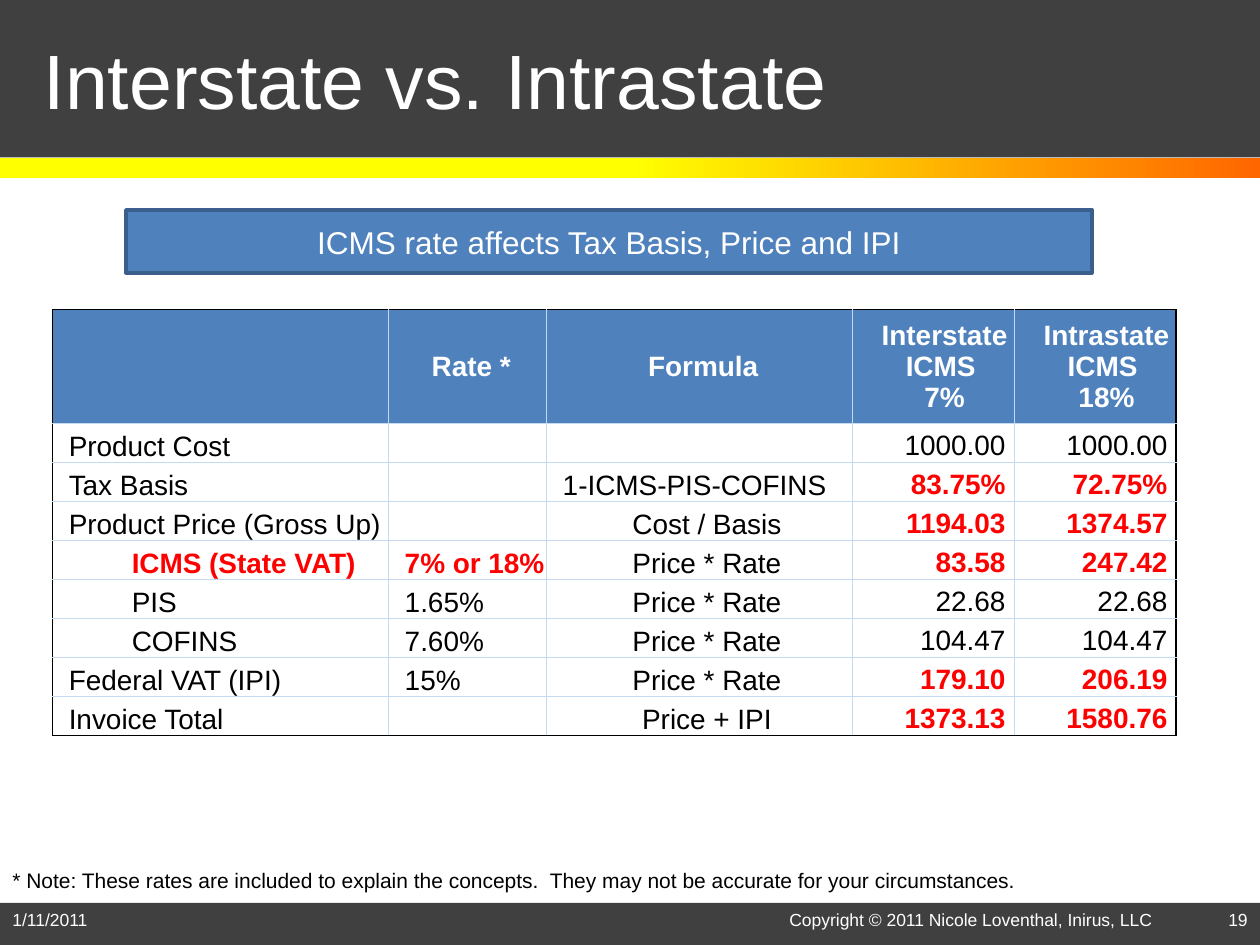
from lxml.etree import SubElement
from pptx import Presentation
from pptx.dml.color import RGBColor
from pptx.enum.shapes import MSO_SHAPE as Preset
from pptx.enum.text import MSO_ANCHOR as Anchor, PP_ALIGN as Align
from pptx.oxml.ns import qn
from pptx.util import Pt

WHITE = RGBColor(0xFF, 0xFF, 0xFF)
BLACK = RGBColor(0x00, 0x00, 0x00)
CHARCOAL = RGBColor(0x40, 0x40, 0x40)
ORANGE = RGBColor(0xFF, 0x66, 0x00)
YELLOW = RGBColor(0xFF, 0xFF, 0x00)
BLUE = RGBColor(0x4F, 0x81, 0xBD)
DARK_BLUE = RGBColor(0x3A, 0x5F, 0x8C)
PALE_BLUE = RGBColor(0xC5, 0xD9, 0xF1)
RED = RGBColor(0xFF, 0x00, 0x00)

PAGE_WIDTH, PAGE_HEIGHT = 720, 540
COLUMN_WIDTHS = [192, 90.3, 174.8, 92.5, 92.5]
HEADER_HEIGHT, ROW_HEIGHT = 60.6, 22.3
INDENT, SUB_INDENT, HEADER_INDENT = 4.3, 40.3, 8.6

HEADERS = ["", "Rate *", "Formula", "Interstate\nICMS \n7%", "Intrastate\nICMS \n18%"]
ROWS = [
    ["Product Cost", "", "", "1000.00", "1000.00"],
    ["Tax Basis", "", "1-ICMS-PIS-COFINS", "83.75%", "72.75%"],
    ["Product Price (Gross Up)", "", "Cost / Basis", "1194.03", "1374.57"],
    ["ICMS (State VAT)", "7% or 18%", "Price * Rate", "83.58", "247.42"],
    ["PIS", "1.65%", "Price * Rate", "22.68", "22.68"],
    ["COFINS", "7.60%", "Price * Rate", "104.47", "104.47"],
    ["Federal VAT (IPI)", "15%", "Price * Rate", "179.10", "206.19"],
    ["Invoice Total", "", "Price + IPI", "1373.13", "1580.76"],
]
SUB_ITEMS = {"ICMS (State VAT)", "PIS", "COFINS"}
VARYING_TAX = "ICMS (State VAT)"
LEFT_FORMULA = "1-ICMS-PIS-COFINS"


def write(frame, text, size, color, align=Align.LEFT, bold=False):
    frame.text = text
    for para in frame.paragraphs:
        para.alignment = align
        for span in para.runs:
            span.font.name = "Arial"
            span.font.size = Pt(size)
            span.font.bold = bold
            span.font.color.rgb = color


def add_bar(page, box, color):
    bar = page.shapes.add_shape(Preset.RECTANGLE, *map(Pt, box))
    bar.shadow.inherit = False
    bar.line.fill.background()
    bar.fill.solid()
    bar.fill.fore_color.rgb = color
    return bar


def add_text(page, box, text, size, color, align=Align.LEFT, anchor=Anchor.TOP, wrap=True):
    frame = page.shapes.add_textbox(*map(Pt, box)).text_frame
    frame.word_wrap = wrap
    frame.vertical_anchor = anchor
    write(frame, text, size, color, align)


def add_title_band(page, left, top, width, height):
    add_bar(page, (left, top, width, height), CHARCOAL)
    add_text(page, (left + 18, top, width - 72, height), "Interstate vs. Intrastate",
             44, WHITE, anchor=Anchor.MIDDLE)
    # Yellow to orange strip under the title
    fill = add_bar(page, (left, top + height, width, 12), ORANGE).fill
    fill.gradient()
    fill.gradient_angle = 180
    for stop, color, position in zip(fill.gradient_stops, (ORANGE, YELLOW), (0, 0.5)):
        stop.color.rgb = color
        stop.position = position


def add_footer(page, left, top, width, height):
    add_bar(page, (left, top, width, height), CHARCOAL)
    add_text(page, (left, top, 168, height), "1/11/2011", 10, WHITE)
    add_text(page, (left + 444, top, 240, height),
             "Copyright © 2011 Nicole Loventhal, Inirus, LLC", 10, WHITE)
    add_text(page, (left + width - 168, top, 168, height), "19", 10, WHITE, Align.RIGHT)


def add_callout(page, *box):
    callout = add_bar(page, box, BLUE)
    callout.line.color.rgb = DARK_BLUE
    callout.line.width = Pt(2)
    callout.text_frame.vertical_anchor = Anchor.MIDDLE
    write(callout.text_frame, "ICMS rate affects Tax Basis, Price and IPI",
          18, WHITE, Align.CENTER)


def set_borders(cell, borders):
    properties = cell._tc.get_or_add_tcPr()
    for index, (side, color, width) in enumerate(borders):
        line = SubElement(properties, qn("a:ln" + side), w=str(Pt(width)))
        fill = SubElement(line, qn("a:solidFill"))
        SubElement(fill, qn("a:srgbClr"), val=str(color))
        properties.insert(index, line)


def set_indent(cell, indent, level=0):
    for para in cell.text_frame.paragraphs:
        para.level = level
        para._p.get_or_add_pPr().set("marL", str(Pt(indent)))


def set_margins(cell, left, top, right, bottom):
    cell.margin_left, cell.margin_top = Pt(left), Pt(top)
    cell.margin_right, cell.margin_bottom = Pt(right), Pt(bottom)


def fill_header_cell(cell, column):
    cell.fill.solid()
    cell.fill.fore_color.rgb = BLUE
    cell.vertical_anchor = Anchor.MIDDLE
    set_margins(cell, 5, 3.6, 0.7, 3.6)
    write(cell.text_frame, HEADERS[column], 16, WHITE, Align.CENTER, True)
    if column > 2:
        set_indent(cell, HEADER_INDENT)


def fill_body_cell(cell, values, column):
    label, text = values[0], values[column]
    is_number = column > 2
    # Amounts that differ between the two cases stand out in red
    if is_number:
        marked = values[3] != values[4]
    else:
        marked = label == VARYING_TAX and column < 2
    if is_number:
        align = Align.RIGHT
    elif column == 2 and text != LEFT_FORMULA:
        align = Align.CENTER
    else:
        align = Align.LEFT
    cell.fill.background()
    cell.vertical_anchor = Anchor.BOTTOM
    set_margins(cell, 5, 0.7, 5 if is_number else 0.7, 0.7 if is_number else 0)
    write(cell.text_frame, text, 16, RED if marked else BLACK, align, marked)
    if column == 0 and label in SUB_ITEMS:
        set_indent(cell, SUB_INDENT, 1)
    elif not is_number:
        set_indent(cell, INDENT)


def add_tax_table(page, left, top):
    row_count, column_count = len(ROWS) + 1, len(COLUMN_WIDTHS)
    height = HEADER_HEIGHT + ROW_HEIGHT * len(ROWS)
    table = page.shapes.add_table(row_count, column_count, Pt(left), Pt(top),
                                  Pt(sum(COLUMN_WIDTHS)), Pt(height)).table
    table.horz_banding = False
    for column, width in zip(table.columns, COLUMN_WIDTHS):
        column.width = Pt(width)
    for r, row in enumerate(table.rows):
        row.height = Pt(ROW_HEIGHT if r else HEADER_HEIGHT)
        for c, cell in enumerate(row.cells):
            if r == 0:
                fill_header_cell(cell, c)
            else:
                fill_body_cell(cell, ROWS[r - 1], c)
            # Black outer frame, pale inner grid
            last_column = c == column_count - 1
            set_borders(cell, [
                ("L", BLACK if c == 0 else PALE_BLUE, 0.5),
                ("R", BLACK if last_column else PALE_BLUE, 1 if last_column else 0.5),
                ("T", BLACK if r == 0 else PALE_BLUE, 0.5),
                ("B", BLACK if r == row_count - 1 else PALE_BLUE, 0.5),
            ])


def main():
    deck = Presentation()
    deck.slide_width, deck.slide_height = Pt(PAGE_WIDTH), Pt(PAGE_HEIGHT)
    page = deck.slides.add_slide(deck.slide_layouts[6])
    add_title_band(page, 0, 0, PAGE_WIDTH, 90)
    add_footer(page, 0, 516, PAGE_WIDTH, 24)
    add_callout(page, 72, 120, 552, 36)
    add_tax_table(page, 30, 177)
    # Footnote
    add_text(page, (0, 492, 593, 21.8),
             "* Note: These rates are included to explain the concepts.  "
             "They may not be accurate for your circumstances.", 12, BLACK, wrap=False)
    deck.save("out.pptx")


if __name__ == "__main__":
    main()
